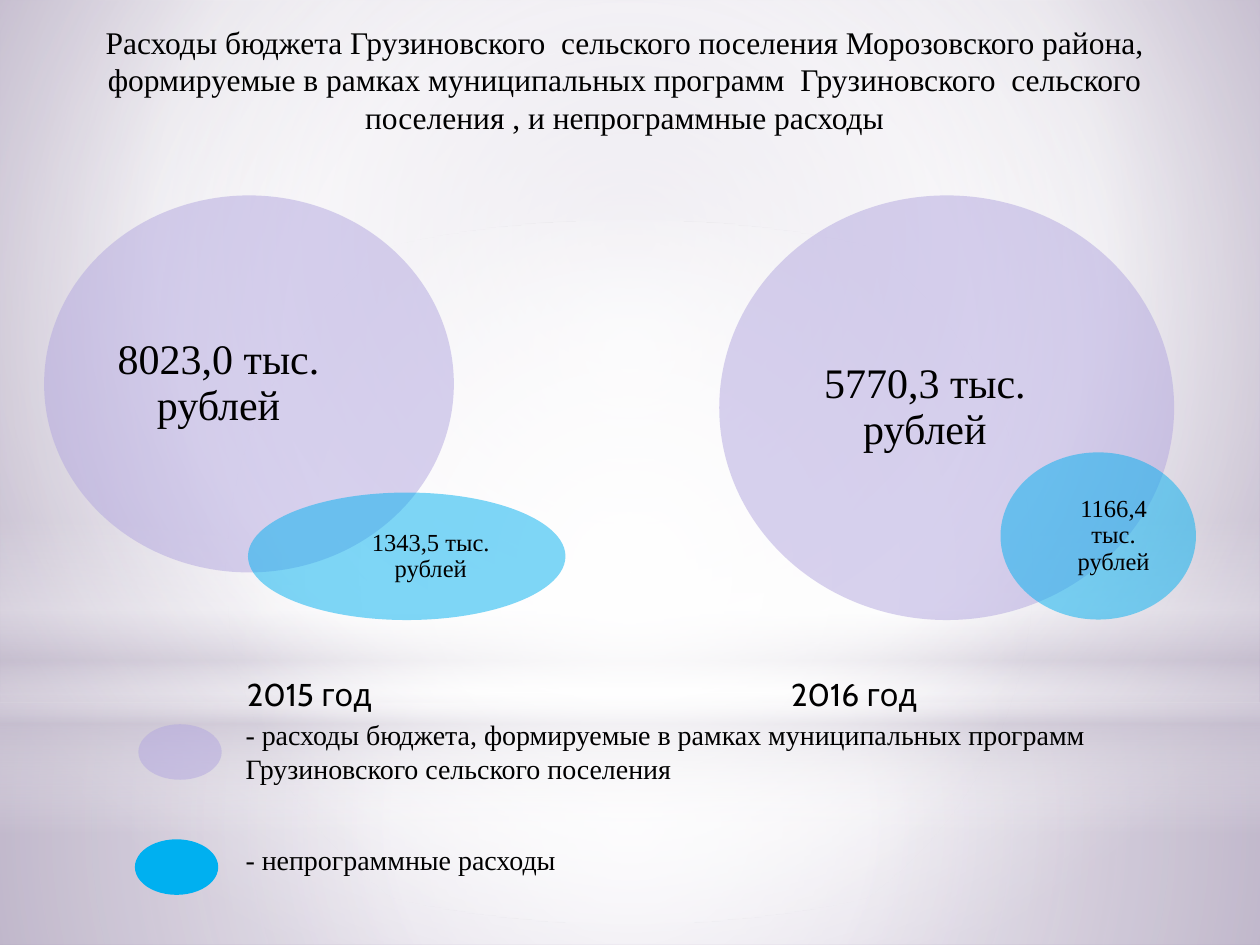
from lxml.etree import SubElement
from pptx import Presentation
from pptx.dml.color import RGBColor
from pptx.enum.shapes import MSO_SHAPE
from pptx.enum.text import MSO_ANCHOR, MSO_AUTO_SIZE, PP_ALIGN
from pptx.oxml.ns import qn
from pptx.util import Cm, Pt

LILAC = RGBColor(0xB2, 0xA6, 0xDF)
BLUE = RGBColor(0x00, 0xB0, 0xF0)
BLACK = RGBColor(0x00, 0x00, 0x00)
WHITE = RGBColor(0xFF, 0xFF, 0xFF)
HAZE = RGBColor(0xC9, 0xC2, 0xD1)
MAUVE = RGBColor(0xC1, 0xB7, 0xCD)
PLUM = RGBColor(0xA1, 0x91, 0xB5)

SERIF = "Times New Roman"
SANS = "Cabin"
CENTRE = (50, 50, 50, 50)


def set_alpha(color_element, percent):
    SubElement(color_element, qn("a:alpha"), val=str(percent * 1000))


def set_gradient(properties, stops, focus=None):
    """Swap the solid fill for a gradient: circular around focus, else vertical.

    Stops are (position, colour, opacity), all but colour in percent.
    """
    solid = properties.find(qn("a:solidFill"))
    gradient = solid.makeelement(qn("a:gradFill"), {"rotWithShape": "1"})
    stop_list = SubElement(gradient, qn("a:gsLst"))
    for position, color, opacity in stops:
        stop = SubElement(stop_list, qn("a:gs"), pos=str(position * 1000))
        set_alpha(SubElement(stop, qn("a:srgbClr"), val=str(color)), opacity)
    if focus:
        circle = SubElement(gradient, qn("a:path"), {"path": "circle"})
        sides = {side: str(value * 1000) for side, value in zip("ltrb", focus)}
        SubElement(circle, qn("a:fillToRect"), sides)
    else:
        SubElement(gradient, qn("a:lin"), ang="5400000", scaled="0")
    properties.replace(solid, gradient)


class BudgetSlide:
    def __init__(self, deck):
        self.page = deck.slides.add_slide(deck.slide_layouts[5])

    def background(self, stops, focus):
        self.page.background.fill.solid()
        properties = next(self.page.element.iter(qn("p:bgPr")))
        set_gradient(properties, stops, focus)

    def shape(self, kind, place, color, opacity=100):
        shape = self.page.shapes.add_shape(kind, *map(Cm, place))
        shape.shadow.inherit = False
        shape.line.fill.background()
        shape.fill.solid()
        shape.fill.fore_color.rgb = color
        if opacity < 100:
            set_alpha(next(shape.element.spPr.iter(qn("a:srgbClr"))), opacity)
        return shape

    def ellipse(self, place, color, opacity=50):
        return self.shape(MSO_SHAPE.OVAL, place, color, opacity)

    def backdrop(self, kind, place, stops, focus=None):
        shape = self.shape(kind, place, WHITE)
        set_gradient(shape.element.spPr, stops, focus)

    def fill_text(self, box, text, size, font=SERIF, align=PP_ALIGN.LEFT):
        frame = box.text_frame
        frame.word_wrap = True
        frame.auto_size = MSO_AUTO_SIZE.NONE
        frame.vertical_anchor = MSO_ANCHOR.TOP
        frame.text = text
        para = frame.paragraphs[0]
        para.alignment = align
        para.font.name = font
        para.font.size = Pt(size)
        para.font.color.rgb = BLACK
        return frame

    def title(self, place, text):
        box = self.page.shapes.title
        box.left, box.top, box.width, box.height = map(Cm, place)
        self.fill_text(box, text, 18, align=PP_ALIGN.CENTER)
        # Bring the title in front of the backdrop
        box.element.getparent().append(box.element)

    def text(self, place, text, size, **style):
        box = self.page.shapes.add_textbox(*map(Cm, place))
        return self.fill_text(box, text, size, **style)

    def amount(self, place, text, size):
        frame = self.text(place, text, size, align=PP_ALIGN.CENTER)
        frame.vertical_anchor = MSO_ANCHOR.MIDDLE
        frame.margin_left = frame.margin_right = 0
        frame.margin_top = frame.margin_bottom = 0
        frame.paragraphs[0].line_spacing = 0.9


def main():
    deck = Presentation()
    deck.slide_width, deck.slide_height = Cm(25.4), Cm(19.05)
    slide = BudgetSlide(deck)

    slide.background([(0, MAUVE, 100), (60, WHITE, 100), (100, PLUM, 100)],
                     (20, 10, 20, 60))
    slide.backdrop(MSO_SHAPE.RECTANGLE, (0, 14.17, 25.4, 4.88),
                   [(0, WHITE, 91), (37, WHITE, 76), (100, HAZE, 79)], CENTRE)
    slide.backdrop(MSO_SHAPE.RECTANGLE, (0, 0, 25.4, 14.17),
                   [(0, WHITE, 89), (48, WHITE, 62), (100, HAZE, 79)], CENTRE)
    slide.backdrop(MSO_SHAPE.RECTANGLE, (0, 10.46, 25.4, 6.35),
                   [(0, WHITE, 0), (29, WHITE, 30), (45, HAZE, 40),
                    (55, WHITE, 26), (65, HAZE, 60), (100, WHITE, 0)])
    slide.backdrop(MSO_SHAPE.OVAL, (0, 4.45, 25.4, 14.17),
                   [(0, WHITE, 100), (56, WHITE, 0)], CENTRE)

    slide.title((1.09, 0.33, 23.01, 2.57),
                "Расходы бюджета Грузиновского  сельского поселения "
                "Морозовского района, формируемые в рамках муниципальных "
                "программ  Грузиновского  сельского поселения , "
                "и непрограммные расходы")

    # Ellipse, its colour, label area, label and text size
    expenses = [
        ((14.5, 3.94, 9.17, 8.56), LILAC,
         (15.37, 4.7, 6.55, 7.04), "5770,3 тыс. рублей", 24),
        ((20.17, 9.12, 3.94, 3.37), BLUE,
         (21.41, 9.58, 2.08, 2.45), "1166,4 тыс. рублей", 14),
        ((0.89, 3.94, 8.26, 7.6), LILAC,
         (2.03, 4.83, 4.75, 5.82), "8023,0 тыс. рублей", 24),
        ((5, 9.93, 6.4, 2.57), BLUE,
         (6.83, 10.24, 3.71, 1.96), "1343,5 тыс. рублей", 14),
    ]
    for outline, color, area, label, size in expenses:
        slide.ellipse(outline, color)
        slide.amount(area, label, size)

    slide.ellipse((2.79, 14.6, 1.68, 1.12), LILAC)
    slide.text((4.7, 14.35, 19.61, 1.63),
               "- расходы бюджета, формируемые в рамках муниципальных "
               "программ Грузиновского сельского поселения", 16)
    slide.ellipse((2.72, 16.92, 1.68, 1.12), BLUE, opacity=100)
    slide.text((4.7, 16.87, 17.2, 0.94), "- непрограммные расходы", 16)

    slide.text((2.97, 13.49, 6.53, 1.02), "2015 год", 18,
               font=SANS, align=PP_ALIGN.CENTER)
    slide.text((15.7, 13.49, 8.31, 1.02), "2016 год", 18, font=SANS)

    deck.save("out.pptx")


if __name__ == "__main__":
    main()
